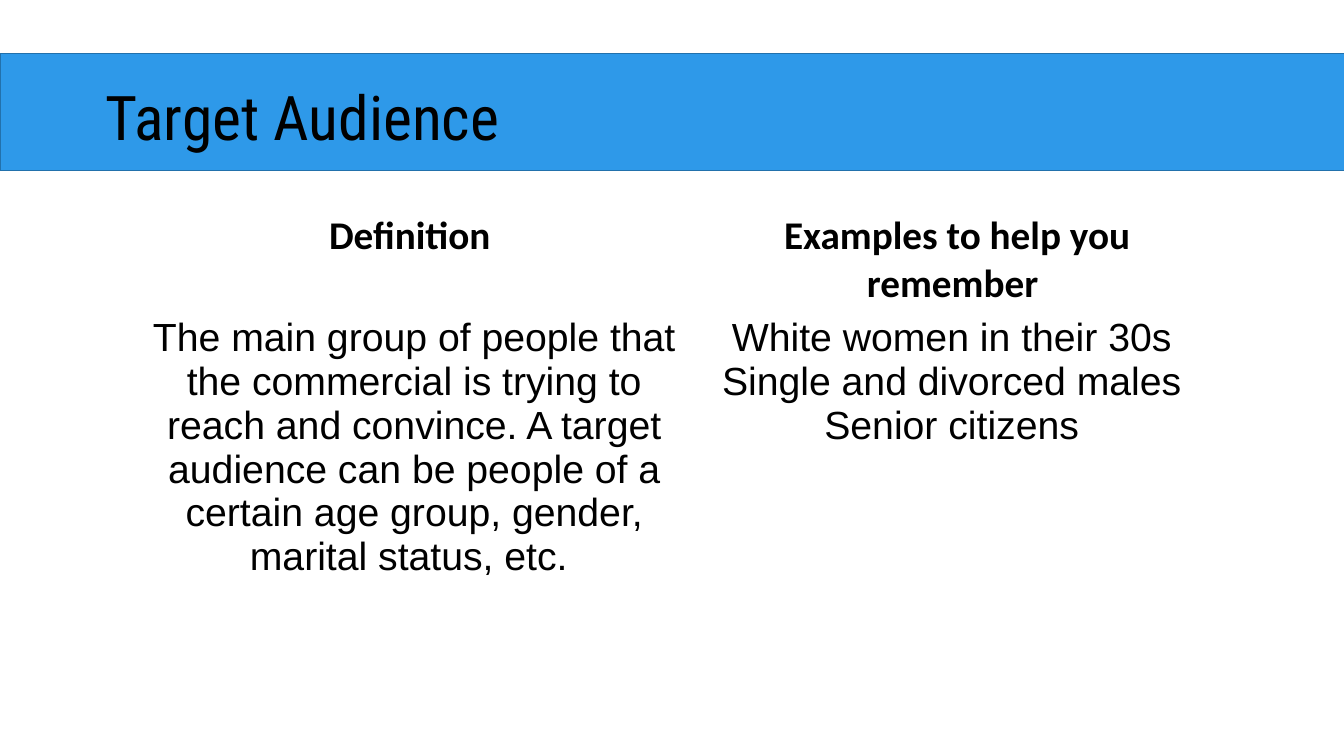
import pptx
import pptx.util
import pptx.dml.color
import pptx.enum.shapes
import pptx.enum.text

Pt = pptx.util.Pt
BLUE = pptx.dml.color.RGBColor(0x2E, 0x99, 0xE9)
DARK_BLUE = pptx.dml.color.RGBColor(0x22, 0x71, 0xAC)
BLACK = pptx.dml.color.RGBColor(0, 0, 0)


def add_text(paragraph, text, font_name, size, bold=False):
    run = paragraph.add_run()
    run.text = text
    run.font.name = font_name
    run.font.size = Pt(size)
    run.font.bold = bold
    run.font.color.rgb = BLACK


presentation = pptx.Presentation()
presentation.slide_width = Pt(960)
presentation.slide_height = Pt(540)
slide = presentation.slides.add_slide(presentation.slide_layouts[5])

band = slide.shapes.add_shape(
    pptx.enum.shapes.MSO_SHAPE.RECTANGLE, Pt(0), Pt(38.2), Pt(964), Pt(83.5)
)
band.shadow.inherit = False
band.fill.solid()
band.fill.fore_color.rgb = BLUE
band.line.color.rgb = DARK_BLUE
band.line.width = Pt(1)

title = slide.shapes.title
title.left, title.top, title.width, title.height = Pt(68.4), Pt(52.6), Pt(828), Pt(113.8)
title.text_frame.vertical_anchor = pptx.enum.text.MSO_ANCHOR.TOP
title.text_frame.auto_size = pptx.enum.text.MSO_AUTO_SIZE.NONE
title_paragraph = title.text_frame.paragraphs[0]
title_paragraph.alignment = pptx.enum.text.PP_ALIGN.LEFT
add_text(title_paragraph, "Target Audience", "Roboto Condensed", 44)
slide.shapes._spTree.append(title._element)

column_widths = [10.8, 396, 379.6]
row_heights = [74.2, 270.7]
row_styles = [("Calibri", 28, True, 4.3), ("Arial", 28, False, 3.6)]
rows = [
    [[], ["Definition "], ["Examples to help you remember "]],
    [
        [],
        [
            "The main group of people that the commercial is trying to reach and convince. "
            "A target audience can be people of a certain age group, gender, marital status, etc. "
        ],
        ["White women in their 30s ", "Single and divorced males ", "Senior citizens "],
    ],
]

table = slide.shapes.add_table(
    len(rows), len(column_widths), Pt(86.4), Pt(151.9), Pt(sum(column_widths)), Pt(sum(row_heights))
).table
table.first_row = False
table.horz_banding = False
for column, width in zip(table.columns, column_widths):
    column.width = Pt(width)

for row, height, (font_name, size, bold, margin), contents in zip(
    table.rows, row_heights, row_styles, rows
):
    row.height = Pt(height)
    for cell, lines in zip(row.cells, contents):
        cell.fill.background()
        cell.margin_left = cell.margin_right = Pt(margin)
        cell.margin_top = cell.margin_bottom = Pt(0)
        for index, line in enumerate(lines):
            text_frame = cell.text_frame
            paragraph = text_frame.add_paragraph() if index else text_frame.paragraphs[0]
            paragraph.alignment = pptx.enum.text.PP_ALIGN.CENTER
            add_text(paragraph, line, font_name, size, bold)

presentation.save("out.pptx")
